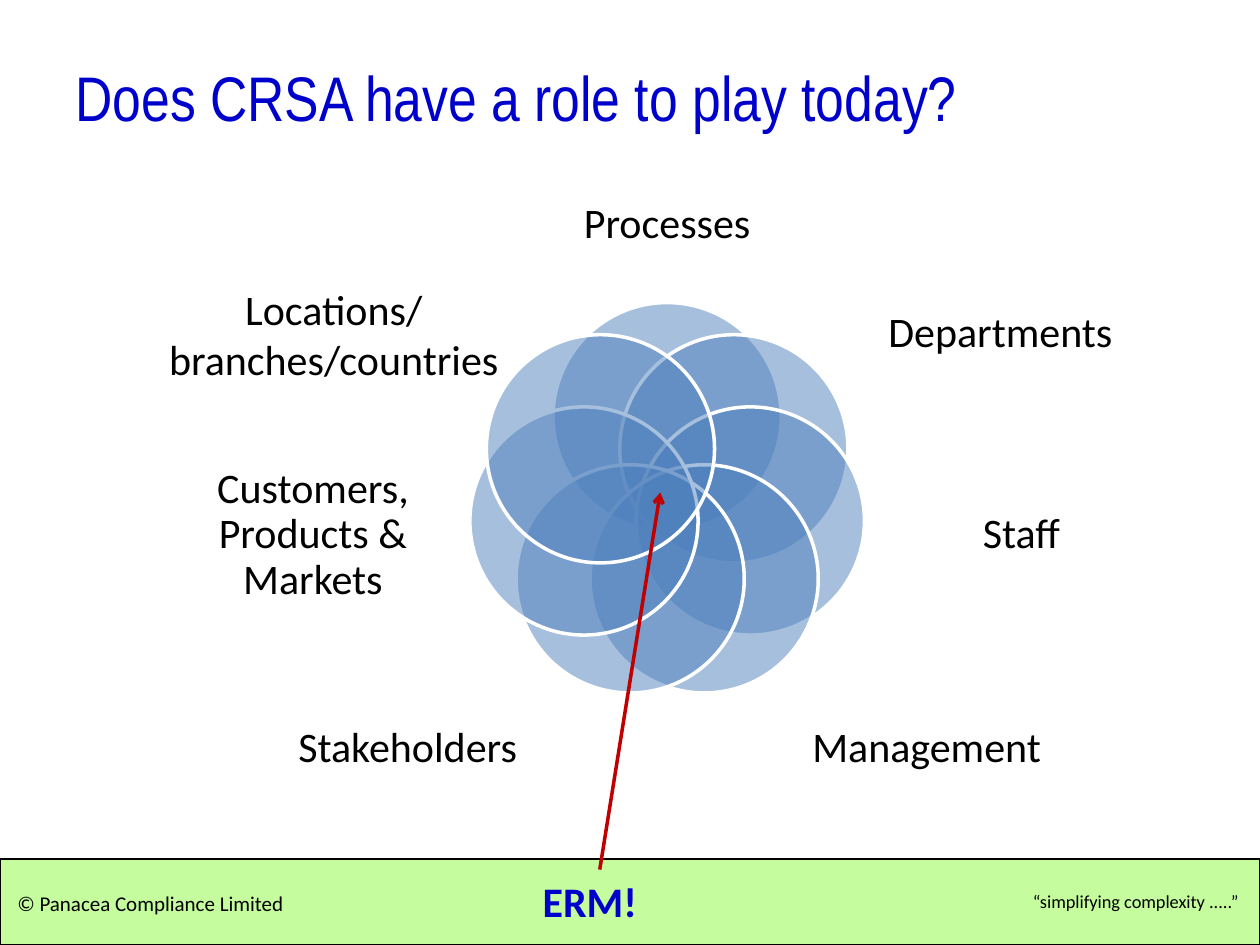
import math

import lxml.etree
import pptx
import pptx.dml.color
import pptx.enum.shapes
import pptx.enum.text
import pptx.oxml.ns
import pptx.util

Cm = pptx.util.Cm
Pt = pptx.util.Pt
ALIGN = pptx.enum.text.PP_ALIGN
ANCHOR = pptx.enum.text.MSO_ANCHOR
OVAL = pptx.enum.shapes.MSO_SHAPE.OVAL
RECTANGLE = pptx.enum.shapes.MSO_SHAPE.RECTANGLE

COLORS = {
    "footer": "C4FC9E",
    "text": "000000",
    "accent": "0000CC",
    "circle": "4F81BD",
    "outline": "FFFFFF",
    "arrow": "C00000",
}
# Clockwise from the top: text, centre offset from the ring's centre, size, line spacing
LABELS = [
    ("Processes", (0, -5.59), (3.84, 1.19), 0.9),
    ("Departments", (6.72, -3.39), (4.98, 3.1), 0.9),
    ("Staff", (7.14, 0.67), (4.88, 3.3), 0.9),
    ("Management", (5.23, 4.98), (5.26, 3.02), 0.9),
    ("Stakeholders", (-5.23, 4.98), (5.26, 3.02), 0.9),
    ("Customers, Products & Markets", (-7.14, 0.67), (4.88, 3.3), 0.9),
    ("Locations/\nbranches/countries", (-6.72, -3.39), (7.65, 3.1), 1.0),
]


def rgb(name):
    return pptx.dml.color.RGBColor.from_string(COLORS[name])


def add_xml(parent, tag, **attributes):
    lxml.etree.SubElement(parent, pptx.oxml.ns.qn(tag), attributes)


def centred_box(x, y, width, height):
    return x - width / 2, y - height / 2, width, height


def add_text(shapes, box, text, size, font="Calibri", color="text", bold=False,
             wrap=True, anchor=ANCHOR.TOP):
    shape = shapes.add_textbox(*map(Cm, box))
    frame = shape.text_frame
    frame.text = text
    frame.word_wrap = wrap
    frame.vertical_anchor = anchor
    for paragraph in frame.paragraphs:
        for run in paragraph.runs:
            run.font.name = font
            run.font.size = Pt(size)
            run.font.bold = bold
            run.font.color.rgb = rgb(color)
    return shape


def add_filled(shapes, kind, box, fill, line, line_width):
    shape = shapes.add_shape(kind, *map(Cm, box))
    shape.shadow.inherit = False
    shape.fill.solid()
    shape.fill.fore_color.rgb = rgb(fill)
    shape.line.color.rgb = rgb(line)
    shape.line.width = Pt(line_width)
    return shape


def add_footer(slide, box):
    left, top, width, height = box
    add_filled(slide.shapes, RECTANGLE, box, "footer", "text", 1.25)
    add_text(slide.shapes, (left + 0.1, top + 0.5, 6.8, 0.77),
             "© Panacea Compliance Limited", 12)
    add_text(slide.shapes, (left + width - 4.83, top + 0.5, 4.75, 0.71),
             "“simplifying complexity .....”", 10.5, wrap=False)


def add_label(shapes, box, text, spacing):
    frame = add_text(shapes, box, text, 24, anchor=ANCHOR.MIDDLE).text_frame
    frame.margin_left = frame.margin_right = frame.margin_top = frame.margin_bottom = 0
    for paragraph in frame.paragraphs:
        paragraph.alignment = ALIGN.CENTER
        paragraph.line_spacing = spacing


def add_venn(slide, box):
    """Ring of overlapping translucent circles, each with its outer label."""
    left, top, width, height = box
    center_x, center_y = left + width / 2, top + height / 2
    diameter = 4.6
    radius = (height - diameter) / 2
    shapes = slide.shapes.add_group_shape().shapes
    for index, (text, (dx, dy), size, spacing) in enumerate(LABELS):
        angle = 2 * math.pi * index / len(LABELS)
        circle_box = centred_box(center_x + radius * math.sin(angle),
                                 center_y - radius * math.cos(angle),
                                 diameter, diameter)
        circle = add_filled(shapes, OVAL, circle_box, "circle", "outline", 2)
        fill_color = circle._element.spPr.find(
            pptx.oxml.ns.qn("a:solidFill") + "/" + pptx.oxml.ns.qn("a:srgbClr"))
        add_xml(fill_color, "a:alpha", val="50000")
        add_label(shapes, centred_box(center_x + dx, center_y + dy, *size), text, spacing)


def add_callout(slide, box, target):
    """Bold caption with an arrow rising from it to the target point."""
    left, top = box[:2]
    add_text(slide.shapes, box, "ERM!", 24, color="accent", bold=True, wrap=False)
    arrow = slide.shapes.add_connector(
        pptx.enum.shapes.MSO_CONNECTOR.STRAIGHT,
        Cm(left + 1.4), Cm(top), *map(Cm, target))
    arrow.line.color.rgb = rgb("arrow")
    arrow.line.width = Pt(2)
    properties = arrow._element.spPr
    add_xml(properties.find(pptx.oxml.ns.qn("a:ln")), "a:tailEnd", type="arrow")
    add_xml(properties, "a:effectLst")


def main():
    presentation = pptx.Presentation()
    presentation.slide_width, presentation.slide_height = Cm(25.4), Cm(19.05)
    slide = presentation.slides.add_slide(presentation.slide_layouts[6])
    add_footer(slide, (0, 17.32, 25.4, 1.73))
    add_text(slide.shapes, (1.27, 0.76, 22.86, 2.36), "Does CRSA have a role to play today?",
             36, font="Arial Narrow", color="accent", anchor=ANCHOR.MIDDLE)
    add_venn(slide, (9.43, 6.1, 8.04, 8.04))
    add_callout(slide, (10.69, 17.53, 2.44, 1.27), (13.31, 9.93))
    presentation.save("out.pptx")


if __name__ == "__main__":
    main()
